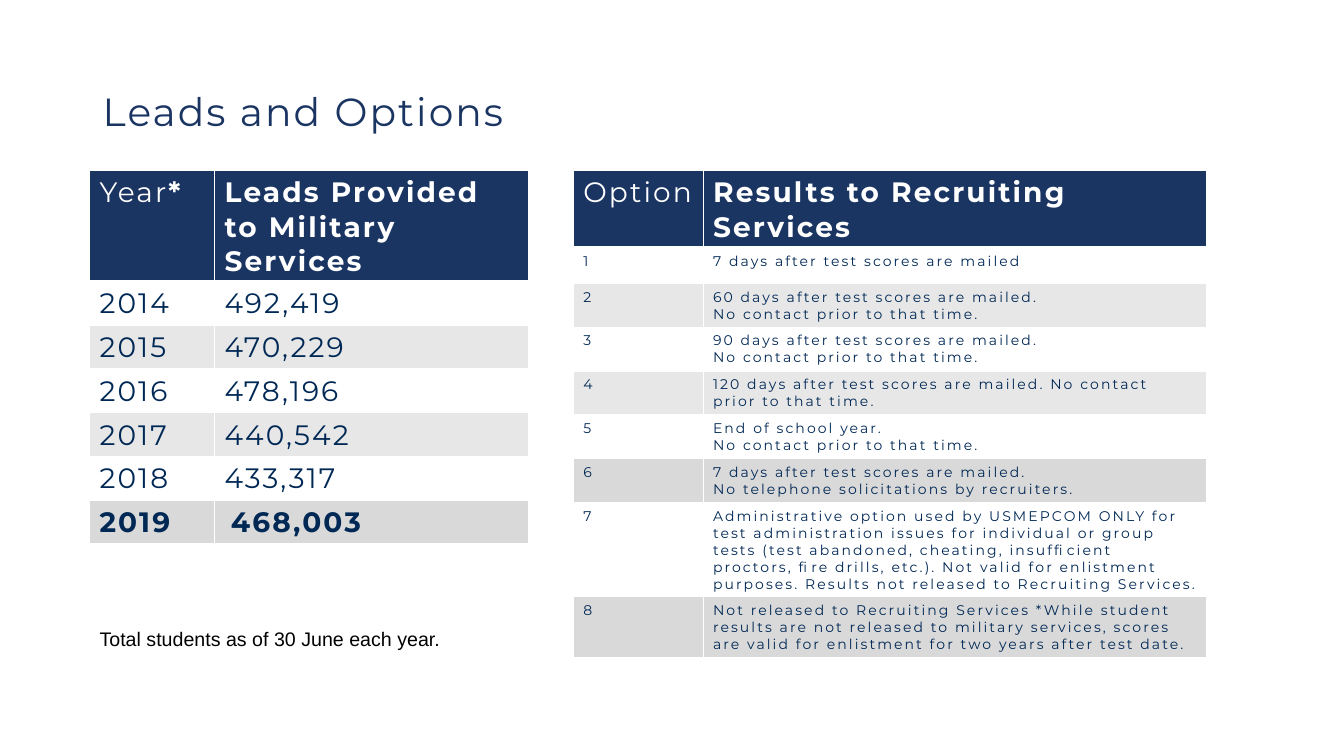
from lxml import etree
from pptx import Presentation
from pptx.dml.color import RGBColor
from pptx.enum.text import MSO_ANCHOR
from pptx.oxml.ns import qn
from pptx.util import Cm, Pt

MIDDLE = MSO_ANCHOR.MIDDLE
TOP = MSO_ANCHOR.TOP

NAVY, DARK_BLUE, WHITE, BLACK = "1B3563", "002855", "FFFFFF", "000000"
BAND, STRONG_BAND = "E7E7E7", "D9D9D9"
HEADING_FONT = "Montserrat"
HEADER_HEIGHT, ROW_HEIGHT = 1.52, 0.9
CELL_MARGIN = 0.25

# Each row: year, leads, fill
LEADS = [
    ("2014", "492,419", None),
    ("2015", "470,229", BAND),
    ("2016", "478,196", None),
    ("2017", "440,542", BAND),
    ("2018", "433,317", None),
    ("2019", "468,003", STRONG_BAND),
    ("", "", None),
]

# Each row: result, fill; options are numbered from 1
NO_CONTACT = "No contact prior to that time."
RESULTS = [
    ("7 days after test scores are mailed", None),
    (f"60 days after test scores are mailed.\n{NO_CONTACT}", BAND),
    (f"90 days after test scores are mailed.\n{NO_CONTACT}", None),
    (f"120 days after test scores are mailed. {NO_CONTACT}", BAND),
    (f"End of school year.\n{NO_CONTACT}", None),
    ("7 days after test scores are mailed.\n"
     "No telephone solicitations by recruiters.", STRONG_BAND),
    ("Administrative option used by USMEPCOM ONLY for test administration "
     "issues for individual or group tests (test abandoned, cheating, "
     "insufficient proctors, fire drills, etc.). Not valid for enlistment "
     "purposes. Results not released to Recruiting Services.", None),
    ("Not released to Recruiting Services *While student results are not "
     "released to military services, scores are valid for enlistment for two "
     "years after test date.", STRONG_BAND),
]


def color(hex_string):
    return RGBColor.from_string(hex_string)


def add_run(paragraph, text, *, size=20, font=HEADING_FONT, fill=DARK_BLUE,
            bold=False, spacing=1.5):
    run = paragraph.add_run()
    run.text = text
    run.font.size = Pt(size)
    run.font.name = font
    run.font.bold = bold
    run.font.color.rgb = color(fill)
    if spacing:
        run.font._element.set("spc", str(int(spacing * 100)))


def write_text(text_frame, text, *, line_spacing=None, **run_format):
    """Write one paragraph for each line of text."""
    for index, line in enumerate(text.split("\n")):
        paragraph = text_frame.paragraphs[0] if index == 0 else text_frame.add_paragraph()
        if line_spacing:
            paragraph.line_spacing = line_spacing
        if line:
            add_run(paragraph, line, **run_format)


def add_text_box(slide, text, left, top, width, height, *, anchor=TOP, **text_format):
    box = slide.shapes.add_textbox(Cm(left), Cm(top), Cm(width), Cm(height))
    box.text_frame.word_wrap = True
    box.text_frame.vertical_anchor = anchor
    write_text(box.text_frame, text, line_spacing=0.9, **text_format)


def style_cell(cell, fill, bottom_width=1):
    """Draw white borders and set the fill; None leaves the cell clear."""
    properties = cell._tc.get_or_add_tcPr()
    for side, width in (("L", 1), ("R", 1), ("T", 1), ("B", bottom_width)):
        line = etree.SubElement(properties, qn(f"a:ln{side}"), w=str(Pt(width)))
        solid = etree.SubElement(line, qn("a:solidFill"))
        etree.SubElement(solid, qn("a:srgbClr"), val=WHITE)
    if fill:
        cell.fill.solid()
        cell.fill.fore_color.rgb = color(fill)
    else:
        cell.fill.background()
    cell.margin_left = cell.margin_right = Cm(CELL_MARGIN)


def add_table(slide, left, top, column_widths, headers, rows):
    """Add a table; each row is (texts, fill, text format)."""
    height = HEADER_HEIGHT + ROW_HEIGHT * len(rows)
    table = slide.shapes.add_table(len(rows) + 1, len(column_widths), Cm(left), Cm(top),
                                   Cm(sum(column_widths)), Cm(height)).table
    table.horz_banding = False
    for column, width in zip(table.columns, column_widths):
        column.width = Cm(width)
    for index, row in enumerate(table.rows):
        row.height = Cm(ROW_HEIGHT if index else HEADER_HEIGHT)
    for index, (text, bold) in enumerate(headers):
        cell = table.cell(0, index)
        style_cell(cell, NAVY, bottom_width=3)
        write_text(cell.text_frame, text, fill=WHITE, bold=bold)
    for row_index, (texts, fill, text_format) in enumerate(rows, start=1):
        for column_index, text in enumerate(texts):
            cell = table.cell(row_index, column_index)
            style_cell(cell, fill)
            write_text(cell.text_frame, text, **text_format)
    return table


def add_leads_table(slide):
    rows = [((year, leads), fill, {"bold": year == "2019"}) for year, leads, fill in LEADS]
    headers = [("Year", False), ("Leads Provided to Military Services", True)]
    table = add_table(slide, 2.26, 4.3, (3.15, 7.92), headers, rows)
    year_header = table.cell(0, 0).text_frame.paragraphs[0]
    add_run(year_header, "*", fill=WHITE, bold=True)
    table.cell(6, 1).margin_left = Cm(CELL_MARGIN + 0.16)


def add_options_table(slide):
    rows = [((str(number), result), fill, {"size": 10})
            for number, (result, fill) in enumerate(RESULTS, start=1)]
    headers = [("Option", False), ("Results to Recruiting Services", True)]
    add_table(slide, 14.45, 4.3, (3.27, 12.69), headers, rows)


def main():
    presentation = Presentation()
    presentation.slide_width = Cm(33.87)
    presentation.slide_height = Cm(19.05)
    slide = presentation.slides.add_slide(presentation.slide_layouts[6])
    add_text_box(slide, "Total students as of 30 June each year.", 2.26, 15.75, 21.46, 2.34,
                 size=14, font="Arial", fill=BLACK, spacing=0)
    add_leads_table(slide)
    add_text_box(slide, "Leads and Options", 2.34, 1.02, 29.21, 3.68,
                 anchor=MIDDLE, size=28, fill=NAVY)
    add_options_table(slide)
    presentation.save("out.pptx")


if __name__ == "__main__":
    main()
